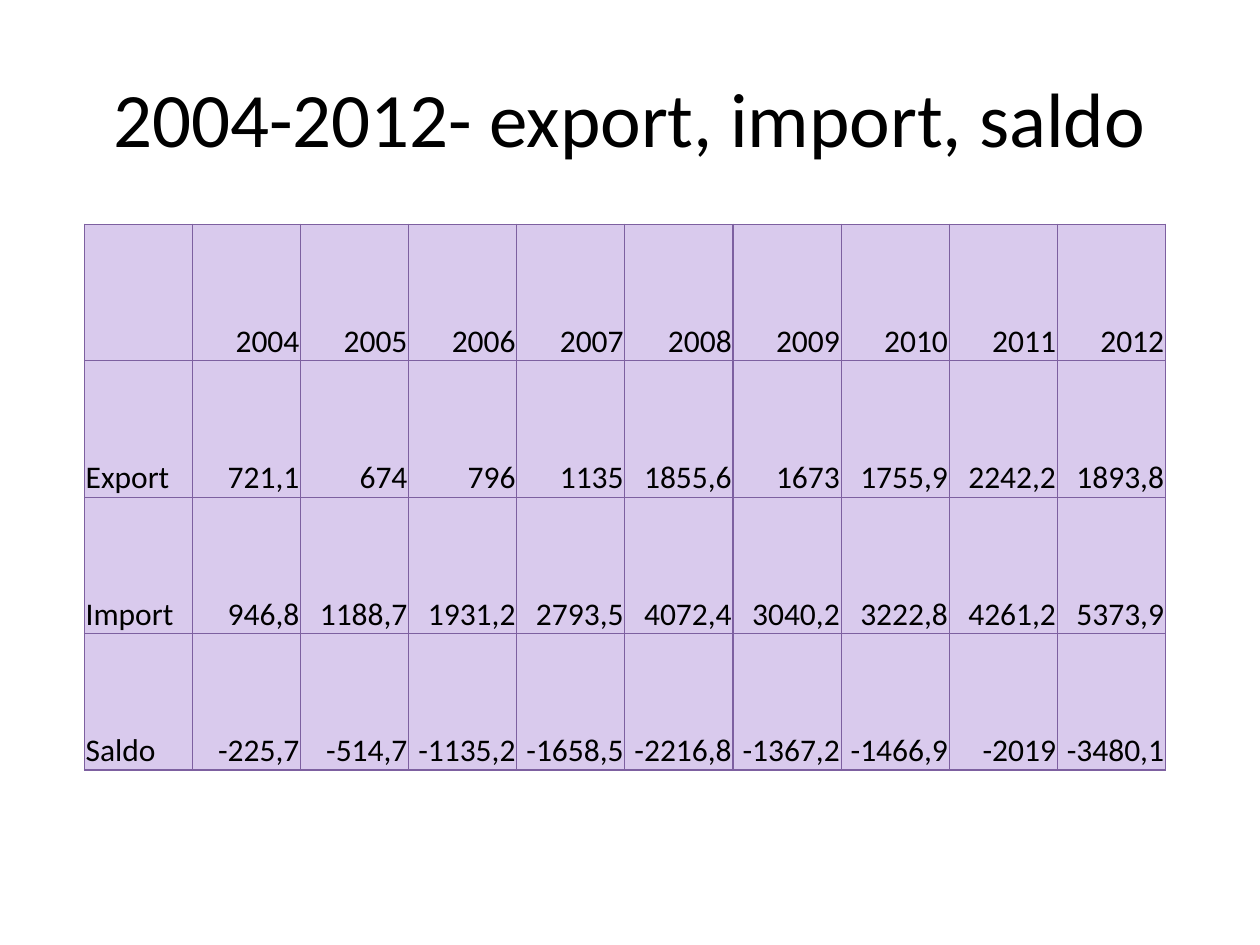
from dataclasses import dataclass

from lxml import etree
from pptx import Presentation
from pptx.dml.color import RGBColor
from pptx.enum.text import MSO_ANCHOR, PP_ALIGN
from pptx.oxml.ns import qn
from pptx.slide import Slide
from pptx.util import Inches, Pt

LEFT, CENTER, RIGHT = PP_ALIGN.LEFT, PP_ALIGN.CENTER, PP_ALIGN.RIGHT
MIDDLE, BOTTOM = MSO_ANCHOR.MIDDLE, MSO_ANCHOR.BOTTOM
TITLE_ONLY = 5
WIDTH, HEIGHT = 10, 7.5

TRADE_ROWS = [
    ["", *(str(year) for year in range(2004, 2013))],
    "Export 721,1 674 796 1135 1855,6 1673 1755,9 2242,2 1893,8".split(),
    "Import 946,8 1188,7 1931,2 2793,5 4072,4 3040,2 3222,8 4261,2 5373,9".split(),
    "Saldo -225,7 -514,7 -1135,2 -1658,5 -2216,8 -1367,2 -1466,9 -2019 -3480,1".split(),
]


def color(hex_string):
    return RGBColor.from_string(hex_string)


def write_text(frame, text, *, font, size, ink, align):
    paragraph = frame.paragraphs[0]
    paragraph.alignment = align
    paragraph.font.size = Pt(size)
    if text:
        run = paragraph.add_run()
        run.text = text
        run.font.name = font
        run.font.size = Pt(size)
        run.font.color.rgb = color(ink)


@dataclass
class SlideBuilder:
    slide: Slide
    font: str = "Calibri"
    ink: str = "000000"
    cell_fill: str = "D9CAED"
    border: str = "7D60A0"
    border_width: float = 0.75

    def title(self, text, left, top, width, height):
        """Place the title; lengths are shares of the slide's size."""
        shape = self.slide.shapes.title
        shape.left, shape.top = Inches(left * WIDTH), Inches(top * HEIGHT)
        shape.width, shape.height = Inches(width * WIDTH), Inches(height * HEIGHT)
        frame = shape.text_frame
        frame.word_wrap = True
        frame.vertical_anchor = MIDDLE
        write_text(frame, text, font=self.font, size=44, ink=self.ink, align=CENTER)

    def table(self, rows, left, top, column_width, row_height):
        """Place an even grid; lengths are shares of the slide's size."""
        column_size = Inches(column_width * WIDTH)
        row_size = Inches(row_height * HEIGHT)
        row_count, column_count = len(rows), len(rows[0])
        table = self.slide.shapes.add_table(
            row_count, column_count, Inches(left * WIDTH), Inches(top * HEIGHT),
            column_size * column_count, row_size * row_count).table
        table.first_row = table.horz_banding = False
        for column in table.columns:
            column.width = column_size
        for row, values in zip(table.rows, rows):
            row.height = row_size
            for index, (cell, value) in enumerate(zip(row.cells, values)):
                self.cell(cell, value, RIGHT if index else LEFT)

    def cell(self, cell, text, align):
        cell.vertical_anchor = BOTTOM
        cell.margin_left = cell.margin_right = cell.margin_top = Inches(0.01)
        cell.margin_bottom = 0
        write_text(cell.text_frame, text, font=self.font, size=18,
                   ink=self.ink, align=align)
        # Borders come before the fill in the cell properties
        properties = cell._tc.get_or_add_tcPr()
        for side in ("lnL", "lnR", "lnT", "lnB"):
            line = etree.SubElement(properties, qn(f"a:{side}"),
                                    w=str(Pt(self.border_width)))
            solid = etree.SubElement(line, qn("a:solidFill"))
            etree.SubElement(solid, qn("a:srgbClr"), val=self.border)
        cell.fill.solid()
        cell.fill.fore_color.rgb = color(self.cell_fill)


def main():
    presentation = Presentation()
    presentation.slide_width, presentation.slide_height = Inches(WIDTH), Inches(HEIGHT)
    layout = presentation.slide_layouts[TITLE_ONLY]
    builder = SlideBuilder(presentation.slides.add_slide(layout))

    # Title
    builder.title("2004-2012- export, import, saldo",
                  left=0.05, top=0.04, width=0.9, height=1 / 6)

    # Trade figures by year
    builder.table(TRADE_ROWS, left=0.67 / WIDTH, top=1.78 / HEIGHT,
                  column_width=0.858 / WIDTH, row_height=1.083 / HEIGHT)

    presentation.save("out.pptx")


if __name__ == "__main__":
    main()
